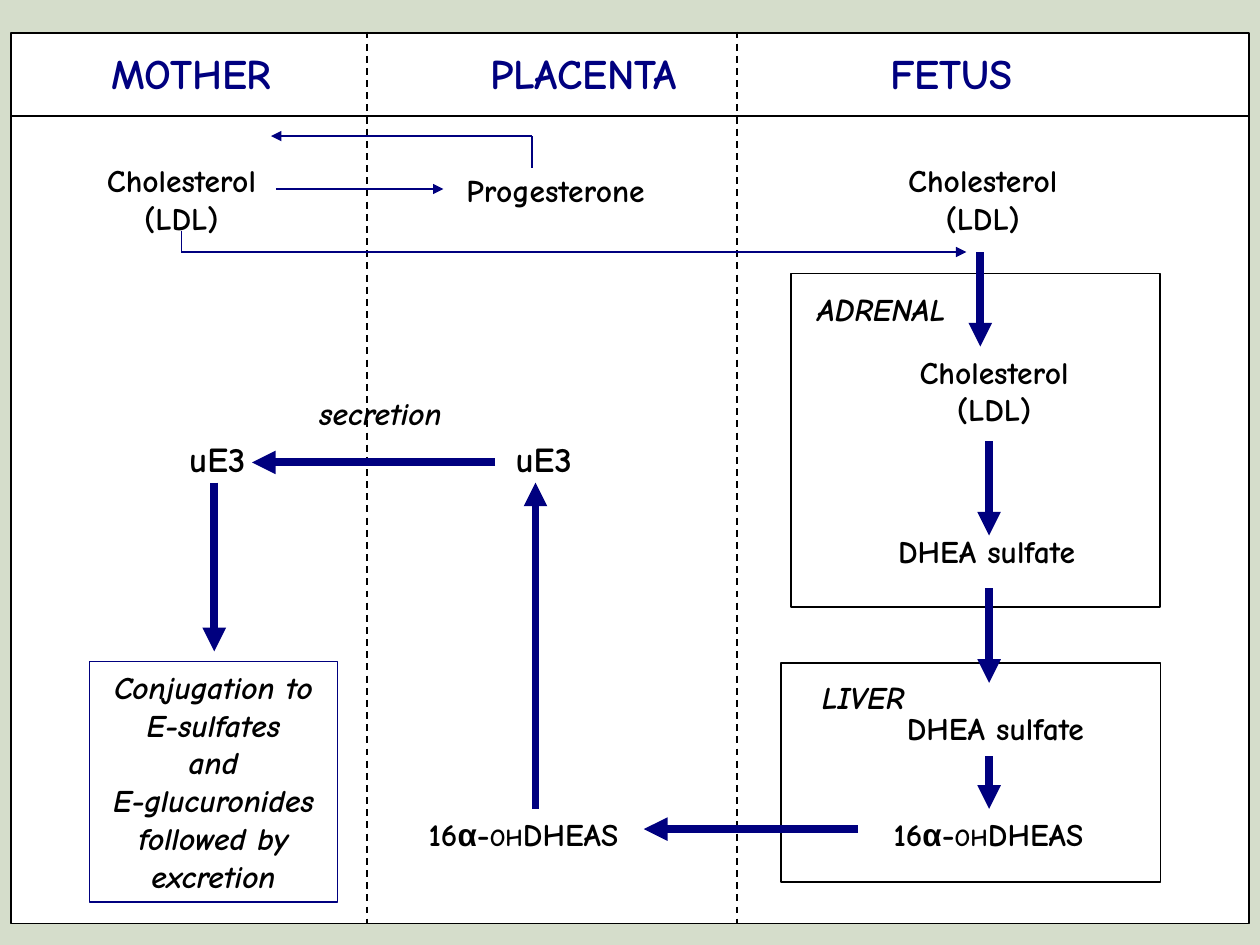
from dataclasses import dataclass

from lxml.etree import SubElement
from pptx import Presentation
from pptx.dml.color import RGBColor
from pptx.enum.dml import MSO_LINE
from pptx.enum.shapes import MSO_CONNECTOR, MSO_SHAPE
from pptx.enum.text import MSO_ANCHOR, PP_ALIGN
from pptx.oxml.ns import qn
from pptx.util import Inches, Pt

SAGE = RGBColor(0xD5, 0xDD, 0xCB)
WHITE = RGBColor(0xFF, 0xFF, 0xFF)
BLACK = RGBColor(0, 0, 0)
NAVY = RGBColor(0, 0, 0x7F)

COLUMNS, ROWS = 100, 75
CELL = Inches(10) // COLUMNS
THIN, THICK = 1, 4.5

BODY = {"name": "Comic Neue", "size": Pt(18), "bold": True, "italic": False}
ITALIC = BODY | {"italic": True}
LARGE = BODY | {"size": Pt(20)}
HEADING = BODY | {"size": Pt(24)}

CHOLESTEROL = ["Cholesterol", "(LDL)"]
HYDROXY_DHEAS = [[("16", {}), ("α", {"name": "Arial"}), ("-", {}),
                  ("OH", {"size": Pt(14)}), ("DHEAS", {})]]
CONJUGATION = ["Conjugation to", "E-sulfates", "and",
               "E-glucuronides", "followed by", "excretion"]


@dataclass
class Box:
    """A region of the page, measured in grid cells."""
    page: object
    left: float
    top: float
    width: float
    height: float

    def at(self, x, y):
        return round((self.left + x) * CELL), round((self.top + y) * CELL)


def write(shape, lines, font=BODY, color=BLACK):
    """Fill a shape with centred lines; a line is a string or (text, changes) spans."""
    frame = shape.text_frame
    frame.word_wrap = False
    frame.vertical_anchor = MSO_ANCHOR.TOP
    for index, line in enumerate(lines):
        para = frame.add_paragraph() if index else frame.paragraphs[0]
        para.alignment = PP_ALIGN.CENTER
        spans = [(line, {})] if isinstance(line, str) else line
        for text, changes in spans:
            span = para.add_run()
            span.text = text
            span.font.color.rgb = color
            for key, value in (font | changes).items():
                setattr(span.font, key, value)


def add_label(box, lines, x, y, width, font=BODY, color=BLACK):
    height = 1 + len(lines) * font["size"].pt / 6
    label = box.page.shapes.add_textbox(
        *box.at(x, y), round(width * CELL), round(height * CELL))
    write(label, lines, font, color)


def add_frame(box, x, y, width, height, color=BLACK, fill=None):
    frame = box.page.shapes.add_shape(
        MSO_SHAPE.RECTANGLE, *box.at(x, y), round(width * CELL), round(height * CELL))
    frame.shadow.inherit = False
    if fill is None:
        frame.fill.background()
    else:
        frame.fill.solid()
        frame.fill.fore_color.rgb = fill
    frame.line.color.rgb = color
    frame.line.width = Pt(THIN)
    return frame


def add_line(box, start, end, color=NAVY, width=THIN, dashed=False, arrow=False):
    line = box.page.shapes.add_connector(
        MSO_CONNECTOR.STRAIGHT, *box.at(*start), *box.at(*end))
    line.line.color.rgb = color
    line.line.width = Pt(width)
    if dashed:
        line.line.dash_style = MSO_LINE.DASH
    properties = line._element.spPr
    if arrow:
        SubElement(properties.find(qn("a:ln")), qn("a:tailEnd"), type="triangle")
    SubElement(properties, qn("a:effectLst"))


def add_arrow(box, start, end, width=THICK):
    add_line(box, start, end, width=width, arrow=True)


def add_down_arrows(box, x, spans):
    for top, bottom in spans:
        add_arrow(box, (x, top), (x, bottom))


def add_heading(box, text, center):
    add_label(box, [text], center - 10, 0.8, 20, HEADING, NAVY)


def add_background(box, dividers):
    add_frame(box, 0.1, 0.1, box.width - 0.2, box.height - 0.1, fill=WHITE)
    add_line(box, (0, 6.7), (box.width, 6.7), BLACK)
    for x in dividers:
        add_line(box, (x, 0), (x, box.height), BLACK, dashed=True)


def add_mother(box):
    add_heading(box, "MOTHER", 14.2)
    add_label(box, CHOLESTEROL, 5.7, 9.8, 15.4)
    add_label(box, ["uE3"], 12.8, 31.7, 6.9, LARGE)
    add_down_arrows(box, 16, [(35.8, 49.2)])
    write(add_frame(box, 6.1, 50, 19.7, 19.1, NAVY), CONJUGATION, ITALIC)


def add_placenta(box):
    add_heading(box, "PLACENTA", 17.2)
    add_label(box, ["Progesterone"], 6.2, 10.6, 17.6)
    add_label(box, ["uE3"], 10.6, 31.7, 6.9, LARGE)
    add_label(box, HYDROXY_DHEAS, 1.7, 61.7, 21.5)
    add_arrow(box, (13.4, 61.7), (13.4, 35.8))


def add_fetus(box):
    add_heading(box, "FETUS", 17)
    add_frame(box, 4.3, 19.2, 29.3, 26.5)
    add_frame(box, 3.5, 50.1, 30.1, 17.4)
    add_label(box, ["ADRENAL"], 3.9, 20, 15.1, ITALIC)
    add_label(box, ["LIVER"], 4.5, 50.8, 11, ITALIC)
    for x, y in [(11.8, 9.8), (12.7, 25)]:
        add_label(box, CHOLESTEROL, x, y, 15.4)
    for x, y in [(10.5, 39.2), (11.2, 53.3)]:
        add_label(box, ["DHEA sulfate"], x, y, 18.6)
    add_label(box, HYDROXY_DHEAS, 9.2, 61.7, 21.5)
    add_down_arrows(box, 19.3, [(17.5, 25)])
    add_down_arrows(box, 20, [(32.5, 40), (44.2, 51.7), (57.5, 61.7)])


def add_exchanges(box):
    """Arrows that cross from one compartment to another."""
    add_arrow(box, (21.1, 12.5), (34.4, 12.5), THIN)
    add_line(box, (13.6, 15.8), (13.6, 17.5))
    add_arrow(box, (13.6, 17.5), (75.9, 17.5), THIN)
    add_line(box, (41.4, 10.8), (41.4, 8.3))
    add_arrow(box, (41.4, 8.3), (20.7, 8.3), THIN)
    add_arrow(box, (67.3, 63.3), (50.3, 63.3))
    add_arrow(box, (38.5, 34.2), (19.2, 34.2))
    add_label(box, ["secretion"], 22.9, 28.3, 13, ITALIC)


def main():
    deck = Presentation()
    deck.slide_width, deck.slide_height = COLUMNS * CELL, ROWS * CELL
    page = deck.slides.add_slide(deck.slide_layouts[6])
    page.background.fill.solid()
    page.background.fill.fore_color.rgb = SAGE

    top, height = 2.5, 70.8
    panel = Box(page, 0.8, top, 98.4, height)
    mother = Box(page, 1, top, 28.1, height)
    placenta = Box(page, 29.1, top, 29.4, height)
    fetus = Box(page, 58.5, top, 40.7, height)

    add_background(panel, [region.left - panel.left for region in (placenta, fetus)])
    add_mother(mother)
    add_placenta(placenta)
    add_fetus(fetus)
    add_exchanges(panel)
    deck.save("out.pptx")


if __name__ == "__main__":
    main()
